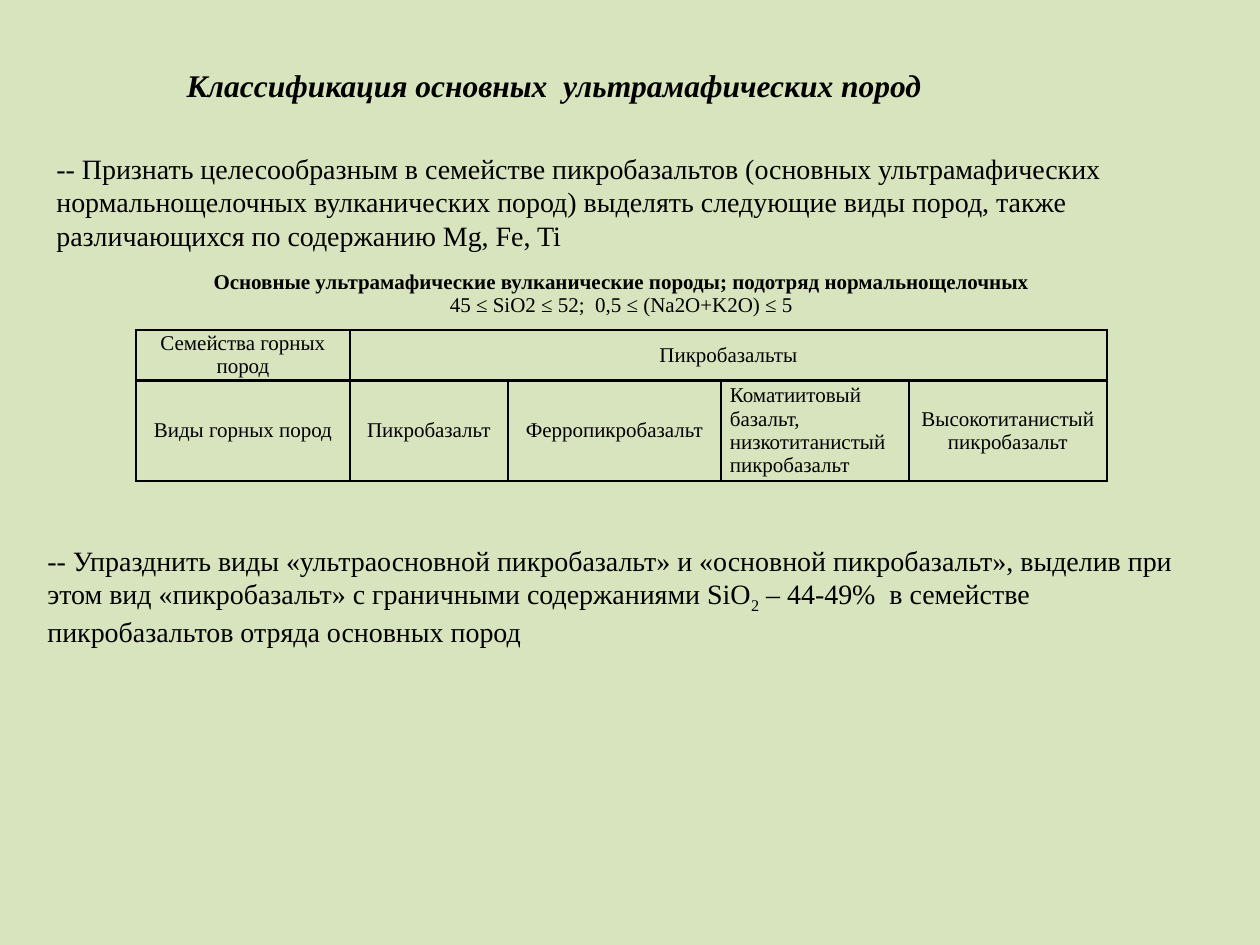
from dataclasses import dataclass

from lxml.etree import SubElement
from pptx import Presentation
from pptx.dml.color import RGBColor
from pptx.enum.text import MSO_ANCHOR as Anchor, MSO_AUTO_SIZE as AutoSize, PP_ALIGN as Align
from pptx.oxml.ns import qn
from pptx.util import Emu, Pt

PIXEL = 914400 / 126
FONT = "Times New Roman"
BLACK = "000000"
BACKGROUND = "D7E4BD"
BORDER_WIDTH = Pt(1.5)
EDGES = ("L", "R", "T", "B")


@dataclass(frozen=True)
class Box:
    left: int
    top: int
    width: int
    height: int


@dataclass(frozen=True)
class TableCell:
    row: int
    column: int
    text: str
    align: Align = Align.CENTER
    columns: int = 1


TITLE_BOX = Box(174, 60, 776, 50)
FAMILY_BOX = Box(44, 145, 1191, 115)
ABOLISH_BOX = Box(35, 537, 1191, 115)
TABLE_LEFT, TABLE_TOP = 136, 258
COLUMN_WIDTHS = (214, 158, 213, 188, 198)
ROW_HEIGHTS = (72, 48, 76)

TABLE_CELLS = (
    TableCell(1, 0, "Семейства горных пород"),
    TableCell(1, 1, "Пикробазальты", columns=4),
    TableCell(2, 0, "Виды горных пород"),
    TableCell(2, 1, "Пикробазальт"),
    TableCell(2, 2, "Ферропикробазальт"),
    TableCell(2, 3, "Коматиитовый базальт, низкотитанистый пикробазальт", Align.JUSTIFY),
    TableCell(2, 4, "Высокотитанистый пикробазальт"),
)


def px(value: int) -> Emu:
    return Emu(round(value * PIXEL))


def color(value: str) -> RGBColor:
    return RGBColor.from_string(value)


def write(paragraph, text: str, *, size: int, bold=False, italic=False,
          align=Align.LEFT, subscript=False) -> None:
    """Append one formatted run to the paragraph."""
    paragraph.alignment = align
    run = paragraph.add_run()
    run.text = text
    font = run.font
    font.name, font.size, font.bold, font.italic = FONT, Pt(size), bold, italic
    font.color.rgb = color(BLACK)
    if subscript:
        font._element.set("baseline", "-25000")


def place(shape, box: Box, wrap: bool):
    """Position a text shape and return its first paragraph."""
    shape.left, shape.top = px(box.left), px(box.top)
    shape.width, shape.height = px(box.width), px(box.height)
    frame = shape.text_frame
    frame.word_wrap = wrap
    frame.auto_size = AutoSize.SHAPE_TO_FIT_TEXT
    frame.vertical_anchor = Anchor.TOP
    return frame.paragraphs[0]


def add_text_box(slide, box: Box):
    shape = slide.shapes.add_textbox(0, 0, px(box.width), px(box.height))
    return place(shape, box, wrap=True)


def set_borders(cell, visible: str) -> None:
    """Draw the named edges (L, R, T, B) and hide the others."""
    properties = cell._tc.get_or_add_tcPr()
    for edge in EDGES:
        line = SubElement(properties, qn(f"a:ln{edge}"), w=str(BORDER_WIDTH))
        if edge in visible:
            fill = SubElement(line, qn("a:solidFill"))
            SubElement(fill, qn("a:srgbClr"), val=BLACK)
        else:
            SubElement(line, qn("a:noFill"))


def add_table(slide):
    frame = slide.shapes.add_table(
        len(ROW_HEIGHTS), len(COLUMN_WIDTHS), px(TABLE_LEFT), px(TABLE_TOP),
        px(sum(COLUMN_WIDTHS)), px(sum(ROW_HEIGHTS)))
    table = frame.table
    table.first_row = table.horz_banding = False
    for column, width in zip(table.columns, COLUMN_WIDTHS):
        column.width = px(width)
    for row, height in zip(table.rows, ROW_HEIGHTS):
        row.height = px(height)

    table.cell(0, 0).merge(table.cell(0, len(COLUMN_WIDTHS) - 1))
    for item in TABLE_CELLS:
        if item.columns > 1:
            last = item.column + item.columns - 1
            table.cell(item.row, item.column).merge(table.cell(item.row, last))

    for row_index, row in enumerate(table.rows):
        for column_index, cell in enumerate(row.cells):
            if row_index == 0:
                visible = "B"
            elif cell.is_spanned:
                visible = "RTB" if column_index == len(COLUMN_WIDTHS) - 1 else "TB"
            else:
                visible = "LRTB"
            set_borders(cell, visible)
            cell.fill.background()
            cell.vertical_anchor = Anchor.MIDDLE
            cell.margin_left = cell.margin_right = px(9)
            cell.margin_top = cell.margin_bottom = 0
    return table


def fill_table(table) -> None:
    heading = table.cell(0, 0).text_frame.paragraphs[0]
    write(heading, "Основные ультрамафические вулканические породы; подотряд нормальнощелочных",
          size=12, bold=True, align=Align.CENTER)
    heading.add_line_break()
    write(heading, "45 ≤ SiO2 ≤ 52;  0,5 ≤ (Na2O+K2O) ≤ 5", size=12, align=Align.CENTER)
    for item in TABLE_CELLS:
        paragraph = table.cell(item.row, item.column).text_frame.paragraphs[0]
        write(paragraph, item.text, size=12, align=item.align)


def main() -> None:
    presentation = Presentation()
    presentation.slide_width, presentation.slide_height = px(1260), px(945)
    slide = presentation.slides.add_slide(presentation.slide_layouts[5])
    background = slide.background.fill
    background.solid()
    background.fore_color.rgb = color(BACKGROUND)

    title = place(slide.shapes.title, TITLE_BOX, wrap=False)
    write(title, "Классификация основных  ультрамафических пород",
          size=18, bold=True, italic=True)

    family = add_text_box(slide, FAMILY_BOX)
    write(family, "-- Признать целесообразным в семействе пикробазальтов (основных "
          "ультрамафических нормальнощелочных вулканических пород) выделять следующие "
          "виды пород, также различающихся по содержанию Mg, Fe, Ti", size=16)

    fill_table(add_table(slide))

    abolish = add_text_box(slide, ABOLISH_BOX)
    write(abolish, "-- Упразднить виды «ультраосновной пикробазальт» и «основной "
          "пикробазальт», выделив при этом вид «пикробазальт» с граничными "
          "содержаниями SiO", size=16)
    write(abolish, "2", size=16, subscript=True)
    write(abolish, " – 44-49%  в семействе пикробазальтов отряда основных пород", size=16)

    presentation.save("out.pptx")


if __name__ == "__main__":
    main()
